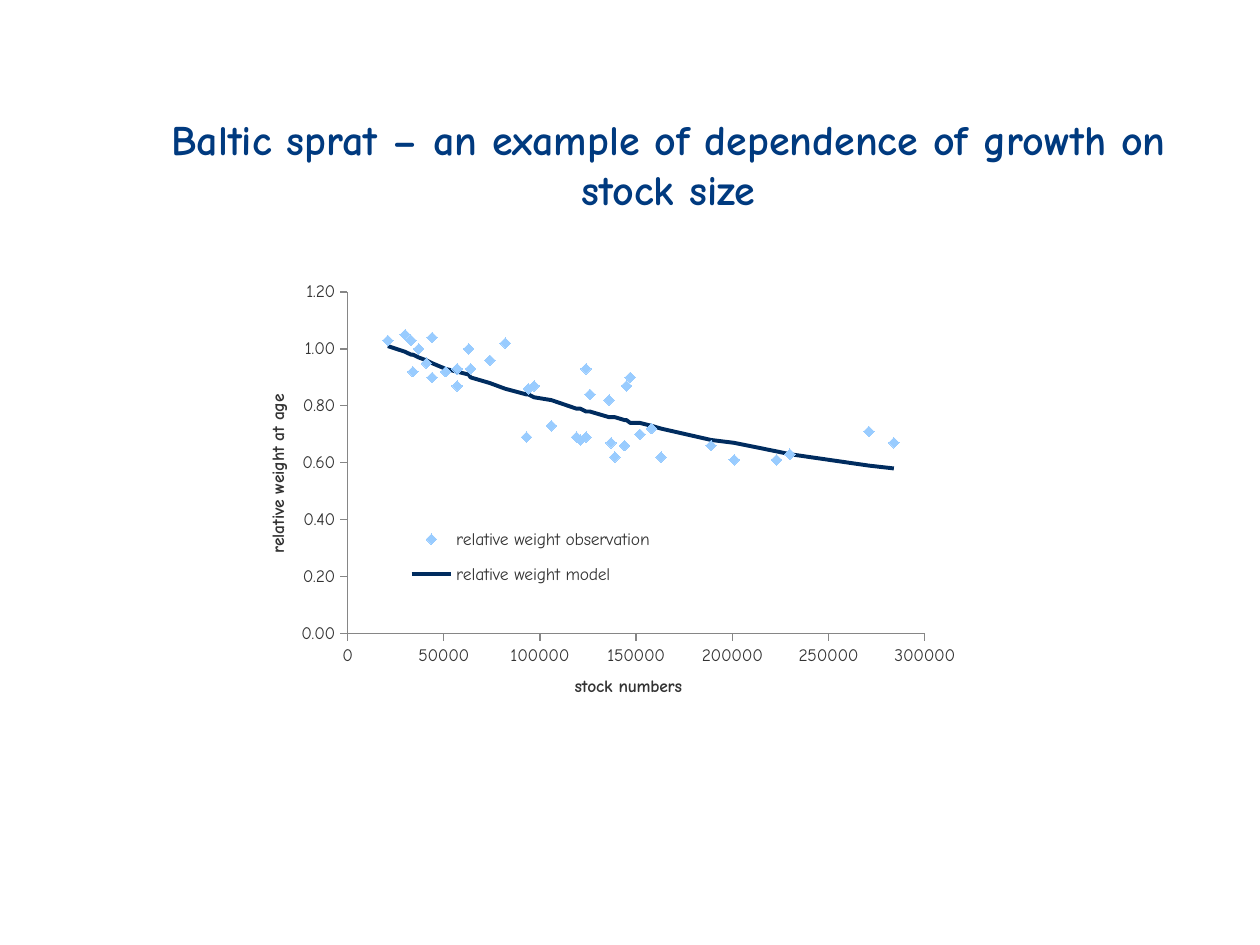
from lxml import etree
from pptx import Presentation
from pptx import util as u
from pptx.chart.data import XyChartData
from pptx.dml.color import RGBColor
from pptx.enum import chart as ch
from pptx.enum import text
from pptx.oxml import ns

PX = u.Inches(1) // 126
FONT = "Comic Neue"
TITLE_BLUE = RGBColor(0x00, 0x3A, 0x7F)
MODEL_NAVY = RGBColor(0x00, 0x2C, 0x5F)
OBSERVED_BLUE = RGBColor(0x99, 0xCC, 0xFF)
LABEL_GREY = RGBColor(0x33, 0x33, 0x33)
AXIS_GREY = RGBColor(0x86, 0x86, 0x86)

# Stock numbers are in thousands, each paired with a relative weight.
OBSERVED = [
    (126, 0.84), (94, 0.86), (57, 0.87), (147, 0.90), (97, 0.87), (51, 0.92),
    (34, 0.92), (21, 1.03), (37, 1.00), (30, 1.05), (74, 0.96), (64, 0.93),
    (57, 0.93), (41, 0.95), (44, 0.90), (33, 1.03), (44, 1.04), (63, 1.00),
    (82, 1.02), (124, 0.93), (145, 0.87), (136, 0.82), (271, 0.71), (284, 0.67),
    (201, 0.61), (223, 0.61), (158, 0.72), (152, 0.70), (119, 0.69), (93, 0.69),
    (137, 0.67), (230, 0.63), (163, 0.62), (139, 0.62), (144, 0.66), (124, 0.69),
    (189, 0.66), (121, 0.68), (106, 0.73),
]
MODEL = [
    (21, 1.01), (30, 0.99), (33, 0.98), (34, 0.98), (37, 0.97), (41, 0.96),
    (44, 0.95), (44, 0.95), (51, 0.93), (57, 0.92), (57, 0.92), (63, 0.91),
    (64, 0.90), (74, 0.88), (82, 0.86), (93, 0.84), (94, 0.84), (97, 0.83),
    (106, 0.82), (119, 0.79), (121, 0.79), (124, 0.78), (124, 0.78), (126, 0.78),
    (136, 0.76), (137, 0.76), (139, 0.76), (144, 0.75), (145, 0.75), (147, 0.74),
    (152, 0.74), (158, 0.73), (163, 0.72), (189, 0.68), (201, 0.67), (223, 0.64),
    (230, 0.63), (271, 0.59), (284, 0.58),
]


def set_all(target, formats):
    for name, value in formats.items():
        setattr(target, name, value)


def style_font(font, size, color, bold=False):
    set_all(font, dict(name=FONT, size=u.Pt(size), bold=bold))
    font.color.rgb = color


def set_layout(parent, index, fractions, inner=False):
    """Place a chart part by its x, y, w, h as fractions of the chart."""
    for old in parent.findall(ns.qn("c:layout")):
        parent.remove(old)
    layout = etree.Element(ns.qn("c:layout"))
    manual = etree.SubElement(layout, ns.qn("c:manualLayout"))
    settings = [("layoutTarget", "inner")] if inner else []
    settings += [("xMode", "edge"), ("yMode", "edge")]
    settings += zip("xywh", map(str, fractions))
    for tag, value in settings:
        etree.SubElement(manual, ns.qn(f"c:{tag}")).set("val", value)
    parent.insert(index, layout)


def add_title(slide, box, wording):
    title = slide.shapes.title
    set_all(title, dict(zip(("left", "top", "width", "height"), (n * PX for n in box))))
    frame = title.text_frame
    frame.text = wording
    set_all(frame, dict(word_wrap=True, auto_size=text.MSO_AUTO_SIZE.NONE,
                        vertical_anchor=text.MSO_ANCHOR.MIDDLE))
    paragraph = frame.paragraphs[0]
    paragraph.alignment = text.PP_ALIGN.CENTER
    style_font(paragraph.runs[0].font, 24, TITLE_BLUE, bold=True)


def style_axis(axis, caption, maximum, step, number_format):
    set_all(axis, dict(minimum_scale=0, maximum_scale=maximum, major_unit=step,
                       has_major_gridlines=False,
                       major_tick_mark=ch.XL_TICK_MARK.OUTSIDE,
                       minor_tick_mark=ch.XL_TICK_MARK.NONE))
    set_all(axis.tick_labels, dict(number_format=number_format,
                                   number_format_is_linked=False))
    axis.format.line.color.rgb = AXIS_GREY
    axis.format.line.width = u.Pt(0.75)
    frame = axis.axis_title.text_frame
    frame.text = caption
    style_font(frame.paragraphs[0].runs[0].font, 10, LABEL_GREY, bold=True)


def add_growth_chart(slide, box):
    data = XyChartData()
    for name, points in (("relative weight observation", OBSERVED),
                         ("relative weight model", MODEL)):
        series = data.add_series(name)
        for stock, weight in points:
            series.add_data_point(stock * 1000, weight)
    chart = slide.shapes.add_chart(ch.XL_CHART_TYPE.XY_SCATTER,
                                   *(n * PX for n in box), data).chart
    set_all(chart, dict(has_title=False, has_legend=True))
    style_font(chart.font, 10, LABEL_GREY)
    style_axis(chart.category_axis, "stock numbers", 300000, 50000, "0")
    style_axis(chart.value_axis, "relative weight at age", 1.2, 0.2, "0.00")

    chart.plots[0].vary_by_categories = False
    observed, model = chart.plots[0].series
    observed.smooth = model.smooth = False
    observed.format.line.fill.background()
    set_all(observed.marker, dict(style=ch.XL_MARKER_STYLE.DIAMOND, size=6))
    observed.marker.format.fill.solid()
    observed.marker.format.fill.fore_color.rgb = OBSERVED_BLUE
    observed.marker.format.line.fill.background()
    model.marker.style = ch.XL_MARKER_STYLE.NONE
    model.format.line.color.rgb = MODEL_NAVY
    model.format.line.width = u.Pt(2.25)

    set_all(chart.legend, dict(position=ch.XL_LEGEND_POSITION.RIGHT,
                               include_in_layout=False))
    plot_area = chart.plots[0]._element.getparent()
    set_layout(plot_area, 0, (0.12, 0.04, 0.82, 0.8), inner=True)
    set_layout(chart.legend._element, 1, (0.2, 0.56, 0.36, 0.2))


def main():
    deck = Presentation()
    set_all(deck, dict(slide_width=u.Inches(10), slide_height=u.Inches(7.5)))
    slide = deck.slides.add_slide(deck.slide_layouts[5])
    add_title(slide, (123, 106, 1091, 115),
              "Baltic sprat – an example of dependence of growth on stock size")
    add_growth_chart(slide, (263, 275, 704, 427))
    deck.save("out.pptx")


if __name__ == "__main__":
    main()
